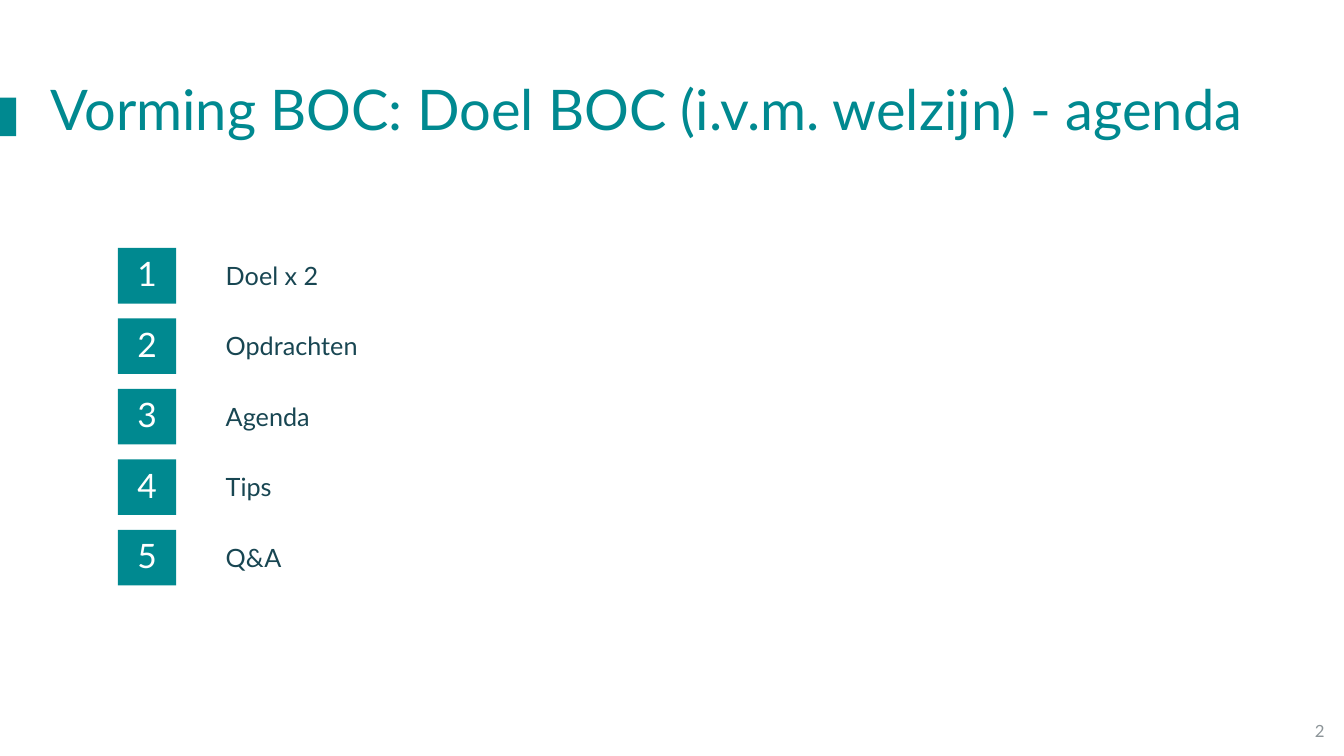
from pptx import Presentation
from pptx.dml.color import RGBColor
from pptx.enum.shapes import MSO_SHAPE
from pptx.enum.text import MSO_ANCHOR, PP_ALIGN
from pptx.util import Cm, Pt

COLORS = {
    "teal": "008990",
    "ink": "184652",
    "grey": "8C9498",
    "white": "FFFFFF",
}
FONT = "Lato"
AGENDA = ["Doel x 2", "Opdrachten", "Agenda", "Tips", "Q&A"]


def write(frame, text, size, color, align=PP_ALIGN.LEFT,
          anchor=MSO_ANCHOR.TOP, line_spacing=1.0):
    frame.word_wrap = True
    frame.vertical_anchor = anchor
    paragraph = frame.paragraphs[0]
    paragraph.text = text
    paragraph.alignment = align
    paragraph.line_spacing = line_spacing
    paragraph.font.name = FONT
    paragraph.font.size = Pt(size)
    paragraph.font.color.rgb = RGBColor.from_string(COLORS[color])


def add_label(slide, left, top, width, height, text, size, color, **style):
    label = slide.shapes.add_textbox(Cm(left), Cm(top), Cm(width), Cm(height))
    write(label.text_frame, text, size, color, **style)


def add_block(slide, left, top, width, height):
    """Add a plain teal rectangle and return it."""
    block = slide.shapes.add_shape(
        MSO_SHAPE.RECTANGLE, Cm(left), Cm(top), Cm(width), Cm(height))
    block.shadow.inherit = False
    block.fill.solid()
    block.fill.fore_color.rgb = RGBColor.from_string(COLORS["teal"])
    block.line.fill.background()
    return block


def add_heading(slide, left, top, width, height, title):
    """Place the accent on the left edge and the title beside it."""
    add_block(slide, left, top + 0.38, 0.41, 0.97)
    indent = 0.79
    add_label(slide, left + indent, top, width - indent, height, title, 40,
              "teal", align=PP_ALIGN.CENTER, line_spacing=0.8)


def add_agenda(slide, left, top, width, height, topics):
    """Stack numbered topics evenly from the top to the bottom of the box."""
    badge_width, badge_height = 1.47, 1.4
    pitch = (height - badge_height) / (len(topics) - 1)
    indent = 2.47
    for index, topic in enumerate(topics):
        row_top = top + index * pitch
        add_label(slide, left + indent, row_top + 0.18, width - indent, 1.02,
                  topic, 18, "ink")
        badge = add_block(slide, left, row_top, badge_width, badge_height)
        write(badge.text_frame, str(index + 1), 24, "white",
              align=PP_ALIGN.CENTER, anchor=MSO_ANCHOR.MIDDLE,
              line_spacing=0.9)


def add_page_number(slide, left, top, width, height, number):
    add_label(slide, left, top, width, height, str(number), 12, "grey",
              align=PP_ALIGN.RIGHT, anchor=MSO_ANCHOR.MIDDLE)


def main():
    presentation = Presentation()
    presentation.slide_width = Cm(33.87)
    presentation.slide_height = Cm(19.05)
    slide = presentation.slides.add_slide(presentation.slide_layouts[6])

    add_page_number(slide, 26, 17.9, 7.63, 1.02, 2)
    add_heading(slide, 0, 2.08, 31.8, 1.7,
                "Vorming BOC: Doel BOC (i.v.m. welzijn) - agenda")
    add_agenda(slide, 2.97, 6.25, 28.83, 8.5, AGENDA)

    presentation.save("out.pptx")


if __name__ == "__main__":
    main()
